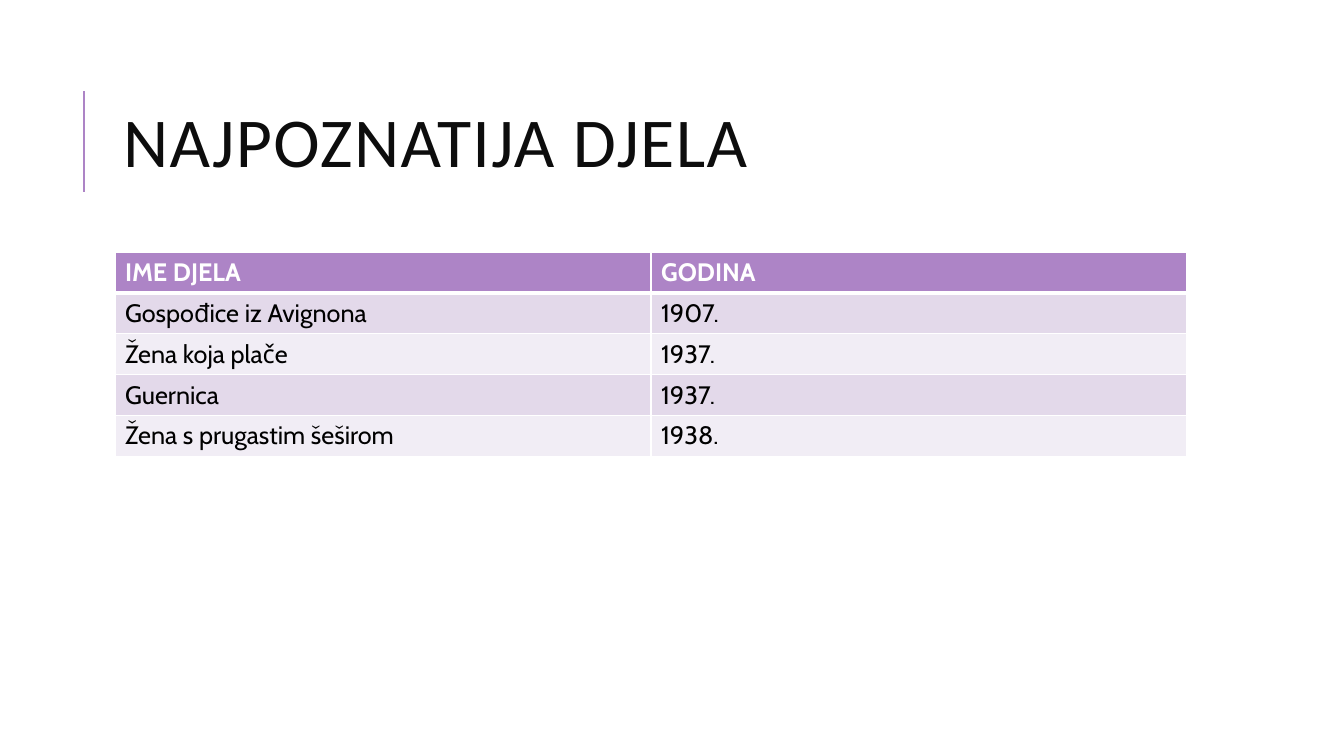
from lxml.etree import SubElement
from pptx import Presentation
from pptx.dml.color import RGBColor
from pptx.enum.shapes import MSO_CONNECTOR
from pptx.enum.text import MSO_ANCHOR, MSO_AUTO_SIZE, PP_ALIGN
from pptx.oxml.ns import qn
from pptx.util import Emu, Pt

EMU_PER_INCH = 914400
PX_PER_INCH = 100.8
COLORS = {
    "accent": "AD84C6",
    "title": "0D0D0D",
    "header_text": "FFFFFF",
    "body_text": "000000",
    "border": "FFFFFF",
    "odd_row": "E3D9EA",
    "even_row": "F1EDF5",
}
WORKS = [
    ("IME DJELA", "GODINA"),
    ("Gospođice iz Avignona", "1907."),
    ("Žena koja plače", "1937."),
    ("Guernica", "1937."),
    ("Žena s prugastim šeširom", "1938."),
]


def px(n):
    return Emu(round(n * EMU_PER_INCH / PX_PER_INCH))


def rgb(name):
    return RGBColor.from_string(COLORS[name])


class SlideBuilder:
    title_font = "Calibri"
    body_font = "Cabin"

    def __init__(self, prs):
        self.s = prs.slides.add_slide(prs.slide_layouts[5])

    def run(self, p, text, font, size, color, bold=False):
        r = p.add_run()
        r.text = text
        r.font.name = font
        r.font.size = Pt(size)
        r.font.bold = bold
        r.font.color.rgb = rgb(color)
        return r

    def line(self, x1, y1, x2, y2, color, width):
        c = self.s.shapes.add_connector(
            MSO_CONNECTOR.STRAIGHT, px(x1), px(y1), px(x2), px(y2))
        c.line.color.rgb = rgb(color)
        c.line.width = Pt(width)
        SubElement(c._element.spPr, qn("a:effectLst"))

    def title(self, text, x, y, w, h):
        sp = self.s.shapes.title
        sp.left, sp.top, sp.width, sp.height = px(x), px(y), px(w), px(h)
        tf = sp.text_frame
        tf.word_wrap = True
        tf.auto_size = MSO_AUTO_SIZE.NONE
        tf.vertical_anchor = MSO_ANCHOR.MIDDLE
        p = tf.paragraphs[0]
        p.alignment = PP_ALIGN.LEFT
        p.line_spacing = 0.8
        r = self.run(p, text, self.title_font, 50, "title")
        r.font._element.set("spc", "100")

    def borders(self, cell, **widths):
        """Draw cell borders; widths in points, keyed L, R, T and B."""
        tcPr = cell._tc.get_or_add_tcPr()
        for side, width in widths.items():
            ln = SubElement(tcPr, qn(f"a:ln{side}"), w=str(Pt(width)))
            fill = SubElement(ln, qn("a:solidFill"))
            SubElement(fill, qn("a:srgbClr"), val=COLORS["border"])

    def table(self, rows, x, y, col_w, row_h):
        cols = len(rows[0])
        table = self.s.shapes.add_table(
            len(rows), cols, px(x), px(y),
            px(col_w * cols), px(row_h * len(rows))).table
        for i, row in enumerate(rows):
            header = i == 0
            fill = "accent" if header else "odd_row" if i % 2 else "even_row"
            for j, text in enumerate(row):
                cell = table.cell(i, j)
                self.borders(cell, L=1, R=1, T=3 if i == 1 else 1,
                             B=3 if header else 1)
                cell.fill.solid()
                cell.fill.fore_color.rgb = rgb(fill)
                self.run(cell.text_frame.paragraphs[0], text, self.body_font,
                         18, "header_text" if header else "body_text", header)


def main():
    prs = Presentation()
    prs.slide_width, prs.slide_height = px(1344), px(756)
    slide = SlideBuilder(prs)
    slide.line(84, 192, 84, 91, "accent", 1.5)
    slide.title("NAJPOZNATIJA DJELA", 113, 65, 1071, 165)
    slide.table(WORKS, x=115, y=252, col_w=536, row_h=40)
    prs.save("out.pptx")


if __name__ == "__main__":
    main()
